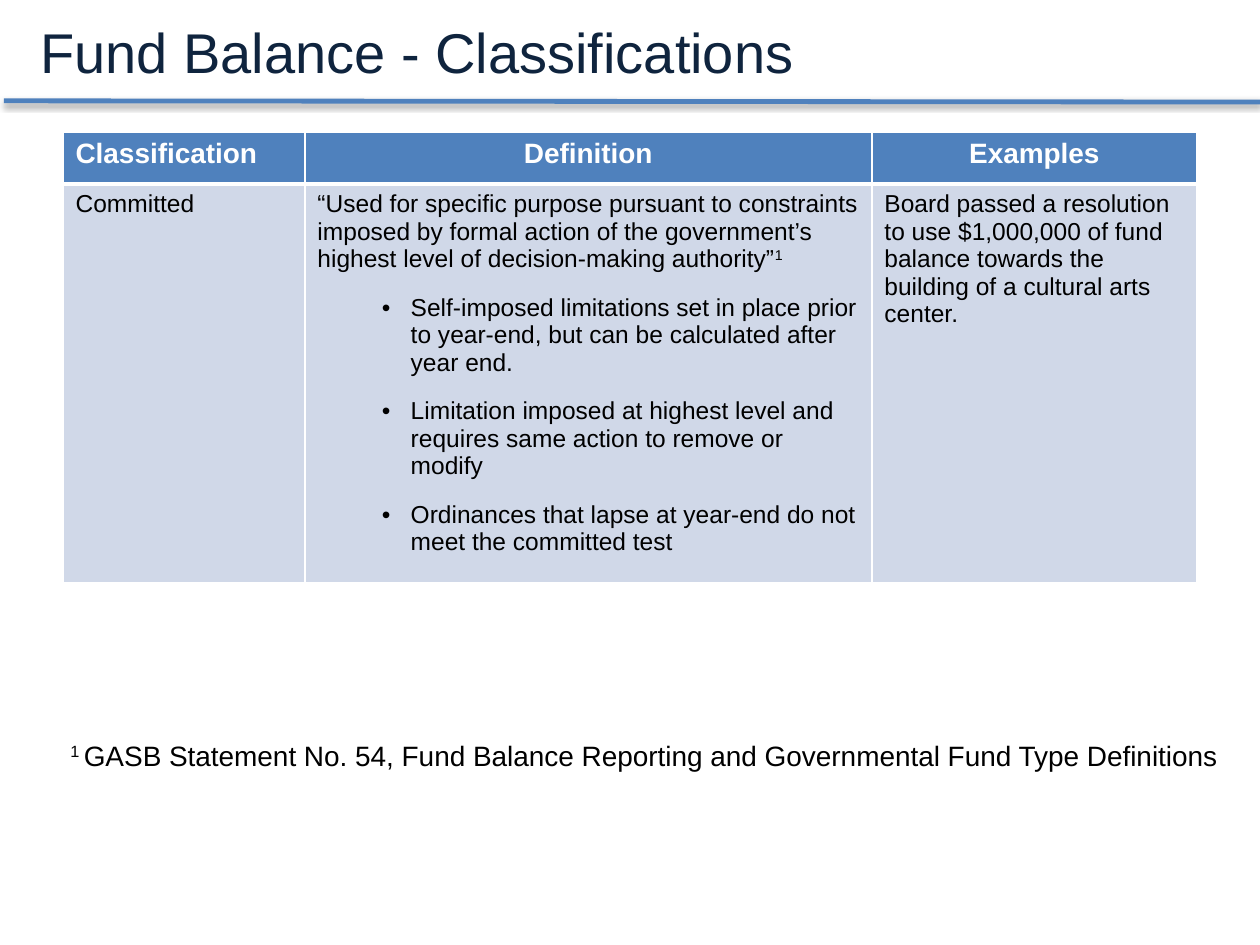
from dataclasses import dataclass

import pptx
import pptx.dml.color
import pptx.enum.shapes
import pptx.enum.text
import pptx.oxml
import pptx.oxml.ns
import pptx.util

Inches = pptx.util.Inches
Pt = pptx.util.Pt
RGBColor = pptx.dml.color.RGBColor
Align = pptx.enum.text.PP_ALIGN

NAVY = RGBColor(0x0F, 0x24, 0x3E)
BLUE = RGBColor(0x4F, 0x81, 0xBD)
PALE = RGBColor(0xD0, 0xD8, 0xE8)
WHITE = RGBColor(0xFF, 0xFF, 0xFF)
BLACK = RGBColor(0x00, 0x00, 0x00)
FONT = "Arial"


@dataclass(frozen=True)
class Span:
    text: str
    raised: bool = False


@dataclass(frozen=True)
class Line:
    spans: tuple[Span, ...]
    bullet: bool = False


@dataclass(frozen=True)
class Style:
    size: float
    color: RGBColor
    bold: bool = False
    align: Align = Align.LEFT


@dataclass(frozen=True)
class Column:
    heading: str
    width: float
    align: Align
    lines: tuple[Line, ...]


def plain(text: str, bullet: bool = False) -> Line:
    return Line((Span(text),), bullet)


COLUMNS = (
    Column("Classification", 1.92, Align.LEFT, (plain("Committed"),)),
    Column("Definition", 4.5, Align.CENTER, (
        Line((
            Span("“Used for specific purpose pursuant to constraints imposed by formal "
                 "action of the government’s highest level of decision-making authority”"),
            Span("1", raised=True),
        )),
        plain("Self-imposed limitations set in place prior to year-end, but can be "
              "calculated after year end.", bullet=True),
        plain("Limitation imposed at highest level and requires same action to remove "
              "or modify", bullet=True),
        plain("Ordinances that lapse at year-end do not meet the committed test", bullet=True),
    )),
    Column("Examples", 2.58, Align.CENTER, (
        plain("Board passed a resolution to use $1,000,000 of fund balance towards "
              "the building of a cultural arts center."),
    )),
)
ROW_HEIGHTS = (0.41, 3.16)
FOOTNOTE = Line((
    Span("1 ", raised=True),
    Span("GASB Statement No. 54, Fund Balance Reporting and Governmental Fund Type Definitions"),
))


def add_element(parent, markup: str):
    """Append a DrawingML element, declaring the a: namespace on its tag."""
    tag, rest = markup.split(">", 1)
    closing = "/" if tag.endswith("/") else ""
    opening = f"{tag.rstrip('/')} {pptx.oxml.ns.nsdecls('a')}{closing}>"
    parent.append(pptx.oxml.parse_xml(opening + rest))


def write_lines(frame, lines: tuple[Line, ...], style: Style) -> None:
    for index, line in enumerate(lines):
        para = frame.paragraphs[0] if index == 0 else frame.add_paragraph()
        if line.bullet:
            para.level = 1
            properties = para._p.get_or_add_pPr()
            properties.set("marL", str(Inches(0.74)))
            properties.set("indent", str(Inches(-0.23)))
            add_element(properties, '<a:buFont typeface="Arial"/>')
            add_element(properties, '<a:buChar char="•"/>')
        para.alignment = style.align
        if index:
            para.space_before = Pt(12)
        for part in line.spans:
            span = para.add_run()
            span.text = part.text
            span.font.name = FONT
            span.font.size = Pt(style.size)
            span.font.bold = style.bold
            span.font.color.rgb = style.color
            if part.raised:
                span._r.get_or_add_rPr().set("baseline", "30000")


def fill_cell(cell, lines: tuple[Line, ...], style: Style, fill: RGBColor,
              top: float, bottom: float) -> None:
    write_lines(cell.text_frame, lines, style)
    properties = cell._tc.get_or_add_tcPr()
    for side, width in (("L", 1), ("R", 1), ("T", top), ("B", bottom)):
        add_element(properties, f'<a:ln{side} w="{Pt(width)}"><a:solidFill>'
                                f'<a:srgbClr val="{WHITE}"/></a:solidFill></a:ln{side}>')
    cell.fill.solid()
    cell.fill.fore_color.rgb = fill


def add_rule(page) -> None:
    """Draw the shadowed line under the title."""
    rule = page.shapes.add_connector(
        pptx.enum.shapes.MSO_CONNECTOR.STRAIGHT,
        Inches(0.03), Inches(0.8), Inches(10), Inches(0.81))
    rule.line.color.rgb = BLUE
    rule.line.width = Pt(2.75)
    add_element(rule._element.spPr,
                f'<a:effectLst><a:outerShdw blurRad="{Pt(3.1)}" dist="{Pt(1.6)}" '
                'dir="5400000" rotWithShape="0"><a:srgbClr val="000000">'
                '<a:alpha val="38000"/></a:srgbClr></a:outerShdw></a:effectLst>')


def add_title(page) -> None:
    title = page.shapes.title
    title.left, title.top = Inches(0.22), Inches(0.09)
    title.width, title.height = Inches(6.24), Inches(0.64)
    frame = title.text_frame
    frame.word_wrap = False
    frame.auto_size = pptx.enum.text.MSO_AUTO_SIZE.SHAPE_TO_FIT_TEXT
    frame.vertical_anchor = pptx.enum.text.MSO_ANCHOR.TOP
    write_lines(frame, (plain("Fund Balance - Classifications"),), Style(32, NAVY))


def add_footnote(page) -> None:
    box = page.shapes.add_textbox(Inches(0.46), Inches(5.81), Inches(9.58), Inches(0.37))
    box.text_frame.word_wrap = True
    box.text_frame.auto_size = pptx.enum.text.MSO_AUTO_SIZE.SHAPE_TO_FIT_TEXT
    write_lines(box.text_frame, (FOOTNOTE,), Style(16, BLACK))


def add_classification_table(page) -> None:
    table = page.shapes.add_table(
        len(ROW_HEIGHTS), len(COLUMNS), Inches(0.5), Inches(1.05),
        Inches(sum(column.width for column in COLUMNS)), Inches(sum(ROW_HEIGHTS))).table
    for row, height in zip(table.rows, ROW_HEIGHTS):
        row.height = Inches(height)
    for index, column in enumerate(COLUMNS):
        table.columns[index].width = Inches(column.width)
        fill_cell(table.cell(0, index), (plain(column.heading),),
                  Style(16, WHITE, True, column.align), BLUE, top=1, bottom=3)
        fill_cell(table.cell(1, index), column.lines, Style(14, BLACK), PALE, top=3, bottom=1)


def main() -> None:
    deck = pptx.Presentation()
    deck.slide_width, deck.slide_height = Inches(10), Inches(7.5)
    page = deck.slides.add_slide(deck.slide_layouts.get_by_name("Title Only"))
    add_rule(page)
    add_title(page)
    add_footnote(page)
    add_classification_table(page)
    deck.save("out.pptx")


if __name__ == "__main__":
    main()
